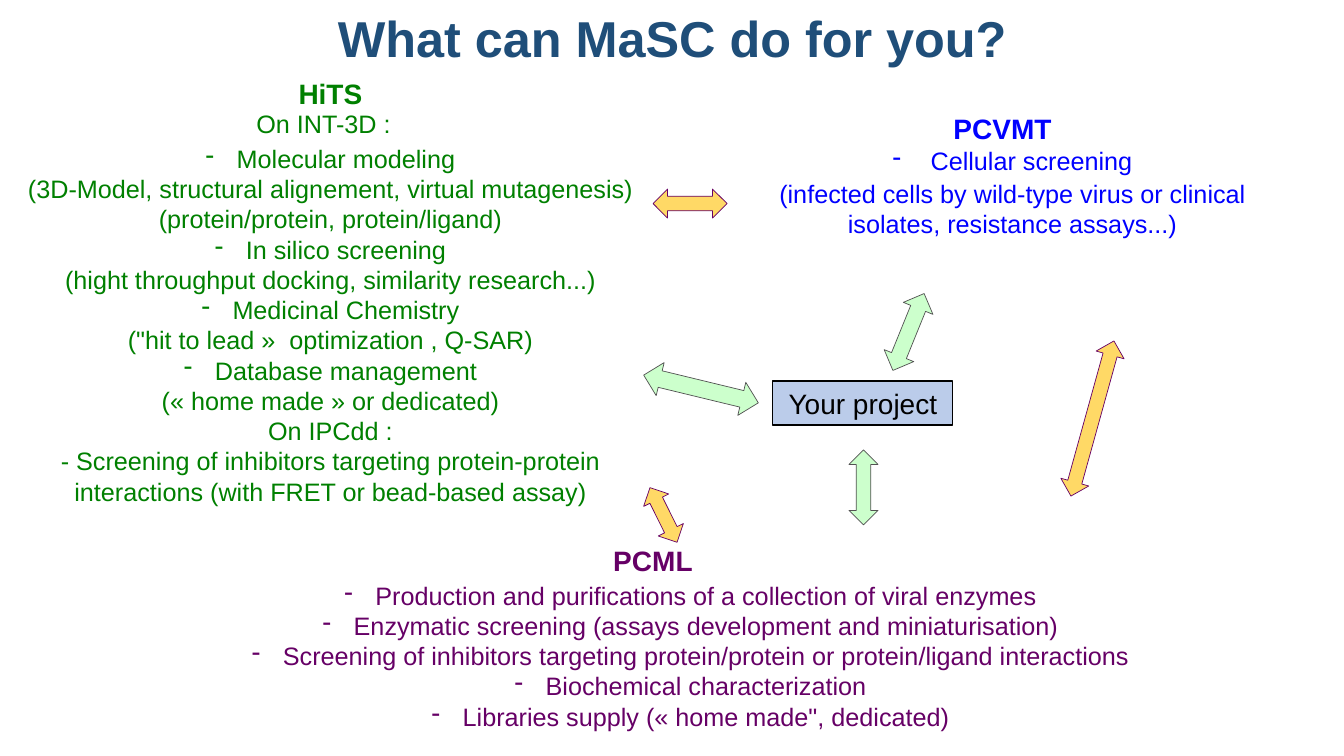
from dataclasses import dataclass

from lxml.etree import SubElement
from pptx import Presentation
from pptx.dml.color import RGBColor
from pptx.enum.shapes import MSO_SHAPE
from pptx.enum.text import MSO_ANCHOR, PP_ALIGN
from pptx.oxml.ns import qn
from pptx.util import Pt

SCALE = 914400 / 100.8


@dataclass(frozen=True)
class Theme:
    font: str = "Arial"
    title: str = "1F4E79"
    hits: str = "008000"
    pcml: str = "660066"
    pcvmt: str = "0000FF"
    ink: str = "000000"
    project: str = "8FAADC"
    mint: str = "CCFFCC"
    mint_line: str = "525252"
    gold: str = "FFD966"
    title_size: int = 36
    head_size: int = 20
    body_size: int = 18
    leading: float = 1.2


THEME = Theme()

HITS_LINES = [
    "- Molecular modeling",
    "(3D-Model, structural alignement, virtual mutagenesis)",
    "(protein/protein, protein/ligand)",
    "- In silico screening",
    "(hight throughput docking, similarity research...)",
    "- Medicinal Chemistry",
    "(\"hit to lead »  optimization , Q-SAR)",
    "- Database management",
    "(« home made » or dedicated)",
    "On IPCdd :",
]
HITS_SCREENING = (
    "- Screening of inhibitors targeting protein-protein "
    "interactions (with FRET or bead-based assay)"
)
PCML_LINES = [
    "- Production and purifications of a collection of viral enzymes",
    "- Enzymatic screening (assays development and miniaturisation)",
    "- Screening of inhibitors targeting protein/protein or protein/ligand interactions",
    "- Biochemical characterization",
    "- Libraries supply (« home made\", dedicated)",
]
PCVMT_NOTE = "(infected cells by wild-type virus or clinical isolates, resistance assays...)"


def px(value):
    return round(value * SCALE)


def place(shape, left, top, width, height):
    shape.left, shape.top = px(left), px(top)
    shape.width, shape.height = px(width), px(height)


def add_dash(para, indent):
    properties = para._p.get_or_add_pPr()
    properties.set("marL", str(px(indent)))
    properties.set("indent", str(-px(indent)))
    SubElement(properties, qn("a:buChar"), char="-")


def write(para, text, *, size=THEME.body_size, color=THEME.ink, bold=False,
          dash=0, before=0, spacing=None):
    para.alignment = PP_ALIGN.CENTER
    para.line_spacing = spacing or Pt(size * THEME.leading)
    if before:
        para.space_before = Pt(before)
    if dash:
        add_dash(para, dash)
    span = para.add_run()
    span.text = text
    span.font.name = THEME.font
    span.font.size = Pt(size)
    span.font.bold = bold
    span.font.color.rgb = RGBColor.from_string(color)


def add_box(page, left, top, width, height, inset=(10, 5)):
    box = page.shapes.add_textbox(px(left), px(top), px(width), px(height))
    frame = box.text_frame
    frame.word_wrap = True
    frame.margin_left = frame.margin_right = px(inset[0])
    frame.margin_top = frame.margin_bottom = px(inset[1])
    return frame


def add_label(page, text, left, top, width, height, **style):
    frame = add_box(page, left, top, width, height, inset=(2, 1))
    write(frame.paragraphs[0], text, **style)


def add_lines(frame, lines, color, indent=31, first_gap=0):
    for index, line in enumerate(lines):
        started = bool(frame.paragraphs[0].runs)
        para = frame.add_paragraph() if started else frame.paragraphs[0]
        dashed = line.startswith("- ")
        write(para, line.removeprefix("- "), color=color,
              dash=indent if dashed else 0,
              before=0 if index else first_gap)


def add_filled(page, kind, bounds, fill, line, weight):
    shape = page.shapes.add_shape(kind, *map(px, bounds))
    shape.shadow.inherit = False
    shape.fill.solid()
    shape.fill.fore_color.rgb = RGBColor.from_string(fill)
    shape.line.color.rgb = RGBColor.from_string(line)
    shape.line.width = Pt(weight)
    return shape


def add_arrow(page, bounds, turn, fill, line):
    arrow = add_filled(page, MSO_SHAPE.LEFT_RIGHT_ARROW, bounds, fill, line, 0.5)
    arrow.rotation = turn


def add_project(page):
    project = add_filled(page, MSO_SHAPE.RECTANGLE, (773, 381, 180, 44),
                         THEME.project, THEME.ink, 0.75)
    color = project.fill._xPr.find(qn("a:solidFill"))[0]
    SubElement(color, qn("a:alpha"), val="60000")
    frame = project.text_frame
    frame.vertical_anchor = MSO_ANCHOR.MIDDLE
    write(frame.paragraphs[0], "Your project", size=THEME.head_size)


def add_title(page):
    title = page.shapes.title
    place(title, 219, 3, 907, 77)
    title.text_frame.vertical_anchor = MSO_ANCHOR.MIDDLE
    write(title.text_frame.paragraphs[0], "What can MaSC do for you?",
          size=THEME.title_size, color=THEME.title, bold=True, spacing=0.9)


def add_hits(page):
    add_label(page, "On INT-3D :", 32, 107, 583, 33, color=THEME.hits)
    frame = add_box(page, 15, 71, 631, 445)
    write(frame.paragraphs[0], "HiTS", size=THEME.head_size,
          color=THEME.hits, bold=True)
    add_lines(frame, HITS_LINES, THEME.hits, first_gap=24)
    write(frame.add_paragraph(), HITS_SCREENING, color=THEME.hits)


def add_pcml(page):
    add_label(page, "PCML", 565, 542, 176, 36, size=THEME.head_size,
              color=THEME.pcml, bold=True)
    frame = add_box(page, 210, 575, 961, 163)
    add_lines(frame, PCML_LINES, THEME.pcml)


def add_pcvmt(page):
    add_label(page, "PCVMT", 876, 110, 253, 36, size=THEME.head_size,
              color=THEME.pcvmt, bold=True)
    frame = add_box(page, 742, 140, 541, 105)
    add_lines(frame, ["- Cellular screening"], THEME.pcvmt, indent=38)
    add_lines(frame, [PCVMT_NOTE], THEME.pcvmt, first_gap=2)


def main():
    deck = Presentation()
    deck.slide_width, deck.slide_height = px(1344), px(756)
    page = deck.slides.add_slide(deck.slide_layouts[5])
    add_title(page)
    add_hits(page)
    add_pcml(page)
    add_pcvmt(page)
    add_project(page)
    mint = (THEME.mint, THEME.mint_line)
    gold = (THEME.gold, THEME.pcml)
    for bounds, turn, colors in [
        ((642, 372, 118, 34), 13.6, mint),
        ((1012, 404, 161, 29), 285.5, gold),
        ((826, 473, 75, 29), 90, mint),
        ((867, 316, 83, 32), 112.1, mint),
        ((653, 189, 74, 29), 0, gold),
        ((633, 501, 61, 28), 63.6, gold),
    ]:
        add_arrow(page, bounds, turn, *colors)
    deck.save("out.pptx")


if __name__ == "__main__":
    main()
